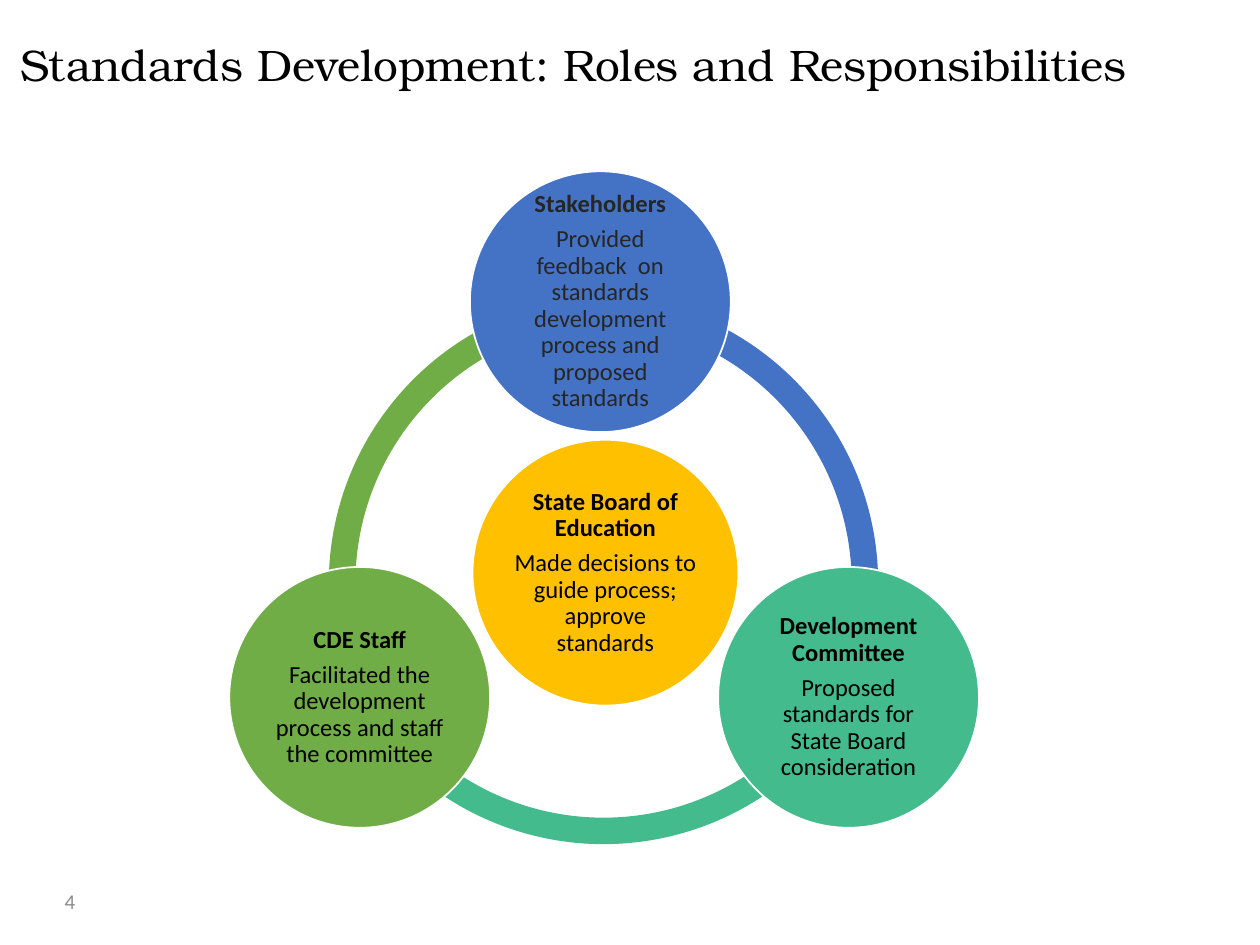
import pptx
import pptx.dml.color
import pptx.enum.shapes
import pptx.enum.text
import pptx.util

COLORS = {
    "black": "000000",
    "charcoal": "262626",
    "gray": "8C8C8C",
    "white": "FFFFFF",
    "blue": "4472C4",
    "teal": "43BB8D",
    "green": "70AD47",
    "gold": "FFC000",
}

presentation = pptx.Presentation()
presentation.slide_width = pptx.util.Inches(10)
presentation.slide_height = pptx.util.Inches(7.5)

# Square grid: 100 columns by 75 rows
UNIT = presentation.slide_width / 100


def grid(*lengths):
    return [round(length * UNIT) for length in lengths]


def rgb(name):
    return pptx.dml.color.RGBColor.from_string(COLORS[name])


def add_text(paragraph, text, size=14, font="Calibri", color="black", bold=False,
             align=pptx.enum.text.PP_ALIGN.CENTER):
    paragraph.alignment = align
    run = paragraph.add_run()
    run.text = text
    run.font.size = pptx.util.Pt(size)
    run.font.name = font
    run.font.bold = bold
    run.font.color.rgb = rgb(color)


def prepare_frame(shape, inset, anchor):
    frame = shape.text_frame
    frame.word_wrap = True
    frame.vertical_anchor = anchor
    frame.margin_left = frame.margin_right = pptx.util.Inches(inset)
    frame.margin_top = frame.margin_bottom = pptx.util.Inches(inset)
    return frame


def add_label(slide, box, text, anchor, **text_format):
    shape = slide.shapes.add_textbox(*grid(*box))
    frame = prepare_frame(shape, 0, anchor)
    add_text(frame.paragraphs[0], text, **text_format)


def add_arc(slide, left, top, start, end, color):
    shape = slide.shapes.add_shape(
        pptx.enum.shapes.MSO_SHAPE.BLOCK_ARC, *grid(left, top, 45.8, 45.8))
    shape.shadow.inherit = False
    # Degrees are stored in 60000ths, adjustments in 100000ths
    shape.adjustments[0] = start * 0.6
    shape.adjustments[1] = end * 0.6
    shape.adjustments[2] = 0.046
    shape.fill.solid()
    shape.fill.fore_color.rgb = rgb(color)
    shape.line.fill.background()


def add_role(slide, left, top, diameter, color, text_color, name, duty):
    shape = slide.shapes.add_shape(
        pptx.enum.shapes.MSO_SHAPE.OVAL, *grid(left, top, diameter, diameter))
    shape.shadow.inherit = False
    shape.fill.solid()
    shape.fill.fore_color.rgb = rgb(color)
    shape.line.color.rgb = rgb("white")
    shape.line.width = pptx.util.Pt(1)
    frame = prepare_frame(shape, 0.02, pptx.enum.text.MSO_ANCHOR.MIDDLE)
    add_text(frame.paragraphs[0], name, color=text_color, bold=True)
    add_text(frame.add_paragraph(), duty, color=text_color)
    for paragraph in frame.paragraphs:
        paragraph.line_spacing = 0.9
        paragraph.space_after = pptx.util.Pt(4.9)


def add_cycle(slide, left, top):
    # Ring segments: left, top, start angle, end angle, colour
    arcs = [
        (7.9, 9.8, 156.17, 266.48, "green"),
        (6.8, 7.6, 30, 150, "teal"),
        (5.7, 9.8, 272.09, 23.76, "blue"),
    ]
    for x, y, *style in arcs:
        add_arc(slide, left + x, top + y, *style)

    # Role circles: left, top, diameter, fill, text colour, name, duty
    roles = [
        (19.3, 21.3, 21.1, "gold", "black", "State Board of Education",
         "Made decisions to guide process; approve standards"),
        (19.1, 0, 20.7, "blue", "charcoal", "Stakeholders",
         "Provided feedback  on standards development process and proposed standards"),
        (38.8, 31.4, 20.7, "teal", "black", "Development Committee",
         "Proposed standards for State Board consideration"),
        (0, 31.4, 20.7, "green", "black", "CDE Staff",
         "Facilitated the development process and staff the committee"),
    ]
    for x, y, *details in roles:
        add_role(slide, left + x, top + y, *details)


def build_slide():
    slide = presentation.slides.add_slide(presentation.slide_layouts[6])
    # Title
    add_label(slide, (1.6, 3, 97.3, 7.8),
              "Standards Development: Roles and Responsibilities",
              pptx.enum.text.MSO_ANCHOR.TOP, size=25.2, font="TeX Gyre Bonum",
              align=pptx.enum.text.PP_ALIGN.LEFT)
    # Slide number
    add_label(slide, (3, 69.5, 5.1, 4), "4",
              pptx.enum.text.MSO_ANCHOR.MIDDLE, size=12, color="gray")
    # Cycle of roles
    add_cycle(slide, 18.2, 13.6)


build_slide()
presentation.save("out.pptx")
